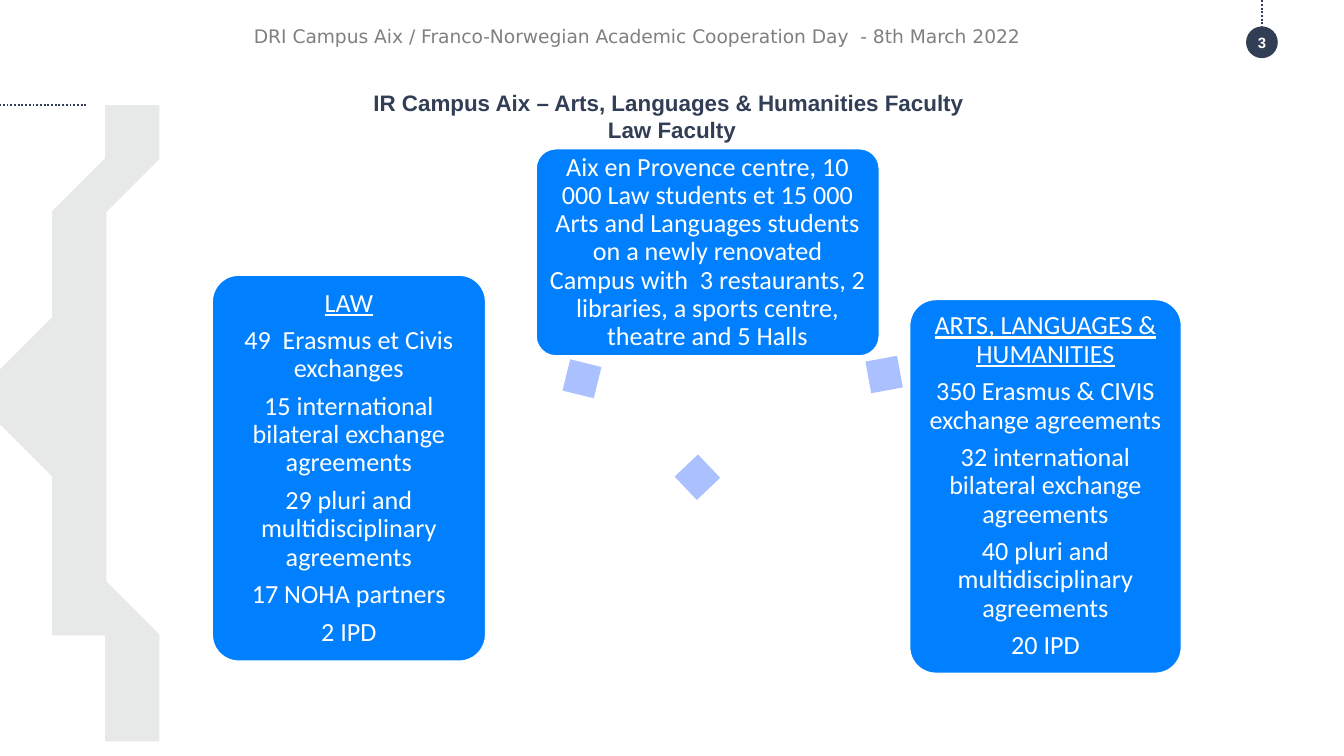
import pptx
import pptx.dml.color
import pptx.enum.dml
import pptx.enum.shapes
import pptx.enum.text
import pptx.oxml
import pptx.util

Cm, Pt = pptx.util.Cm, pptx.util.Pt
RGB = pptx.dml.color.RGBColor.from_string
SHAPE = pptx.enum.shapes.MSO_SHAPE
ANCHOR = pptx.enum.text.MSO_ANCHOR
ALIGN = pptx.enum.text.PP_ALIGN
COLORS = {"navy": "313E56", "blue": "0080FF", "light": "ABC0FF",
          "crescent": "E7E8E8", "grey": "808080", "white": "FFFFFF"}


def write(sp, paragraphs, size, font, color, bold=False, heading=False,
          align=ALIGN.CENTER, anchor=ANCHOR.MIDDLE, inset=0.0,
          line_spacing=None, space_after=0):
    """Fill a shape with paragraphs; heading underlines the first one."""
    tf = sp.text_frame
    tf.word_wrap = True
    tf.vertical_anchor = anchor
    tf.margin_left = tf.margin_right = tf.margin_top = tf.margin_bottom = Cm(inset)
    for i, text in enumerate(paragraphs):
        p = tf.paragraphs[0] if i == 0 else tf.add_paragraph()
        p.text = text
        p.alignment = align
        p.space_after = Pt(space_after)
        if line_spacing:
            p.line_spacing = line_spacing
        for r in p.runs:
            r.font.size = Pt(size)
            r.font.name = font
            r.font.bold = bold
            r.font.underline = heading and i == 0
            r.font.color.rgb = RGB(COLORS[color])


def paint(sp, fill, line=None, width=0.75):
    """Set a shape's fill and outline, without shadow."""
    sp.shadow.inherit = False
    sp.fill.solid()
    sp.fill.fore_color.rgb = RGB(COLORS[fill])
    if line:
        sp.line.color.rgb = RGB(COLORS[line])
        sp.line.width = Pt(width)
    else:
        sp.line.fill.background()


prs = pptx.Presentation()
prs.slide_width, prs.slide_height = Cm(25.4), Cm(14.29)
s = prs.slides.add_slide(prs.slide_layouts[6])

# Crescent: upper half of both edges, mirrored about its middle
middle = 7.7
outer = [(3.25, 1.71), (3.22, 1.64), (3.07, 1.55), (2.87, 1.55), (2.72, 1.63),
         (2.49, 1.85), (2.26, 2.13), (2.01, 2.54), (1.73, 3.0), (1.42, 3.58),
         (1.19, 4.06), (0.99, 4.57), (0.74, 5.38), (0.61, 5.99), (0.53, 6.5),
         (0.48, 6.96), (0.46, 7.42)]
inner = [(1.7, 7.37), (1.73, 6.91), (1.78, 6.35), (1.88, 5.72), (2.08, 4.8),
         (2.31, 4.04), (2.54, 3.4), (2.74, 2.92), (3.05, 2.21), (3.2, 1.85)]
lower = [(x, 2 * middle - y) for x, y in outer[::-1] + inner[::-1]]
outline = outer + lower + inner
builder = s.shapes.build_freeform(*outline[0], scale=Cm(1))
builder.add_line_segments(outline[1:], close=True)
paint(builder.convert_to_shape(), "crescent", "crescent")

# Dotted lines
for x1, y1, x2, y2 in [(23.85, 0.53, 23.85, 0), (1.63, 1.98, 0, 1.98)]:
    line = s.shapes.add_connector(pptx.enum.shapes.MSO_CONNECTOR.STRAIGHT,
                                  Cm(x1), Cm(y1), Cm(x2), Cm(y2))
    line.line.color.rgb = RGB(COLORS["navy"])
    line.line.width = Pt(1)
    line.line.dash_style = pptx.enum.dml.MSO_LINE.ROUND_DOT
    line._element.spPr.append(pptx.oxml.parse_xml(
        '<a:effectLst xmlns:a="http://schemas.openxmlformats.org/drawingml/2006/main"/>'))

# Page number
sp = s.shapes.add_shape(SHAPE.OVAL, Cm(23.55), Cm(0.5), Cm(0.6), Cm(0.6))
paint(sp, "navy")
write(sp, ["3"], 8, "Arial", "white", bold=True)

# Campus and faculty boxes
boxes = [
    ((10.11, 2.79, 6.53, 3.96), False, [
        "Aix en Provence centre, 10 000 Law students et 15 000 Arts and Languages "
        "students on a newly renovated Campus with  3 restaurants, 2 libraries, "
        "a sports centre, theatre and 5 Halls"]),
    ((17.17, 5.64, 5.18, 7.11), True, [
        "ARTS, LANGUAGES & HUMANITIES",
        "350 Erasmus & CIVIS exchange agreements",
        "32 international bilateral exchange agreements",
        "40 pluri and multidisciplinary agreements",
        "20 IPD"]),
    ((3.99, 5.18, 5.21, 7.34), True, [
        "LAW",
        "49  Erasmus et Civis exchanges",
        "15 international bilateral exchange agreements",
        "29 pluri and multidisciplinary agreements",
        "17 NOHA partners",
        "2 IPD"]),
]
for place, heading, paragraphs in boxes:
    sp = s.shapes.add_shape(SHAPE.ROUNDED_RECTANGLE, *map(Cm, place))
    sp.adjustments[0] = 0.1
    paint(sp, "blue", "white", 2)
    write(sp, paragraphs, 14, "Calibri", "white", heading=heading,
          inset=0.15, line_spacing=0.9, space_after=5)

# Double arrows between the boxes
for x, y, angle in [(16.28, 6.65, 34.6), (12.75, 8.59, 181.4), (10.57, 6.73, 328.9)]:
    sp = s.shapes.add_shape(SHAPE.LEFT_RIGHT_ARROW, Cm(x), Cm(y), Cm(0.86), Cm(0.86))
    sp.adjustments[0], sp.adjustments[1] = 0.6, 0.5
    sp.rotation = angle
    paint(sp, "light")

# Title
sp = s.shapes.add_textbox(Cm(1.27), Cm(1.68), Cm(22.86), Cm(1.35))
write(sp, ["IR Campus Aix – Arts, Languages & Humanities Faculty \vLaw Faculty"],
      12, "Arial", "navy", bold=True, anchor=ANCHOR.TOP)

# Running header
sp = s.shapes.add_textbox(Cm(4.55), Cm(0.26), Cm(18.52), Cm(0.84))
write(sp, ["DRI Campus Aix / Franco-Norwegian Academic Cooperation Day  - 8th March 2022"],
      10, "DejaVu Sans", "grey", align=ALIGN.LEFT, inset=0.25)

prs.save("out.pptx")
